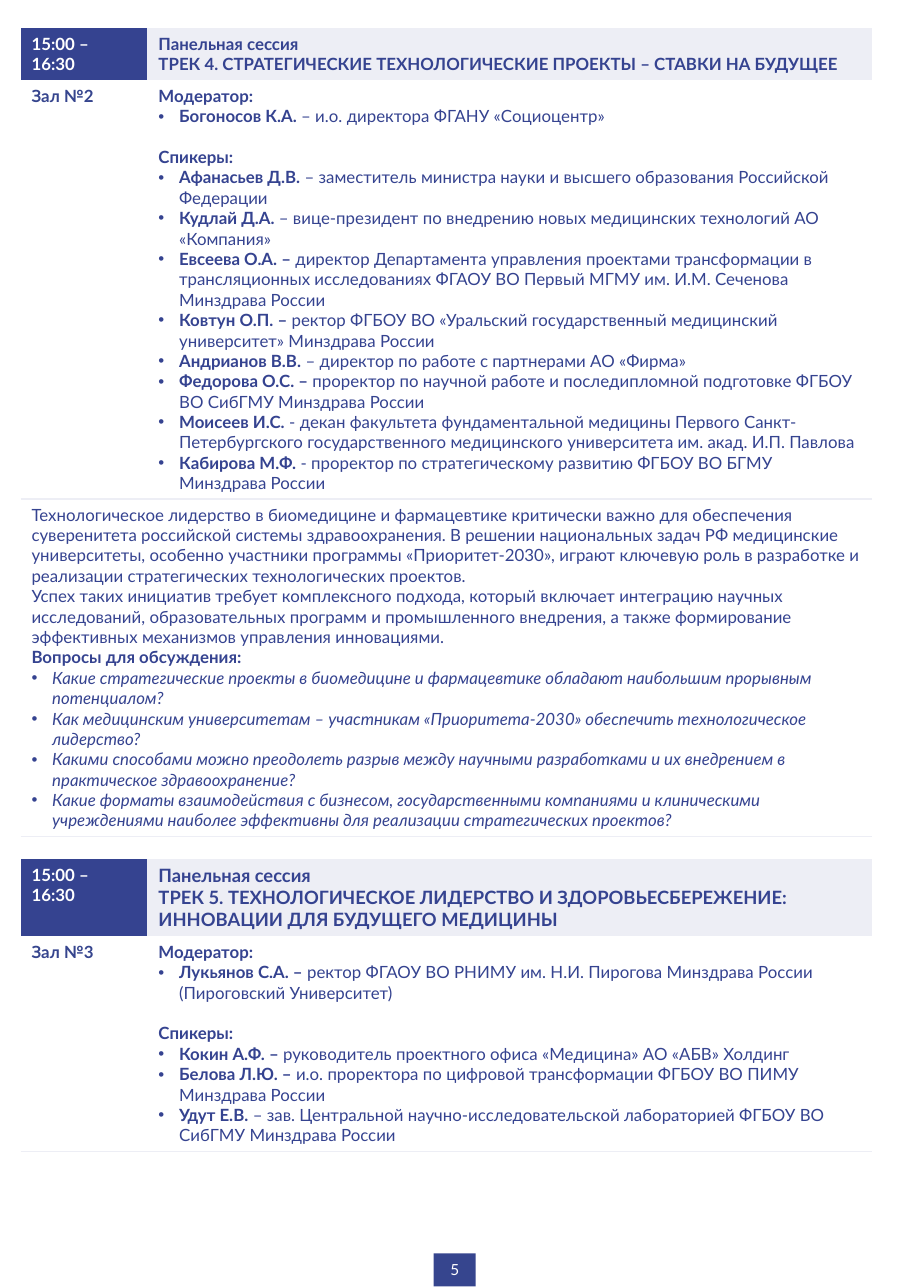
from dataclasses import dataclass

from lxml.etree import SubElement
from pptx import Presentation
from pptx.dml.color import RGBColor
from pptx.enum.shapes import MSO_SHAPE
from pptx.enum.text import MSO_ANCHOR, PP_ALIGN
from pptx.oxml.ns import qn
from pptx.util import Pt


@dataclass(frozen=True)
class Theme:
    font: str = "Lato"
    ink: str = "354390"
    accent: str = "36458E"
    pale: str = "EDEEF5"
    white: str = "FFFFFF"
    text_size: float = 11
    page_size: float = 10
    indent: float = 13.5
    blank_line: float = 13.2


@dataclass(frozen=True)
class Line:
    """A paragraph: bold lead, then plain (or italic) text."""
    lead: str = ""
    text: str = ""
    bullet: bool = False
    italic: bool = False
    gap: bool = False


@dataclass(frozen=True)
class Session:
    time: str
    kind: str
    title: str
    hall: str
    moderator: tuple
    speakers: tuple
    summary: tuple = ()
    questions: tuple = ()
    title_size: float = 11


THEME = Theme()
COLUMNS = (83, 473.5)

TRACK_4 = Session(
    time="15:00 – 16:30",
    kind="Панельная сессия",
    title="ТРЕК 4. СТРАТЕГИЧЕСКИЕ ТЕХНОЛОГИЧЕСКИЕ ПРОЕКТЫ – СТАВКИ НА БУДУЩЕЕ",
    hall="Зал №2",
    moderator=("Богоносов К.А. ", "– и.о. директора ФГАНУ «Социоцентр»"),
    speakers=(
        ("Афанасьев Д.В. ", "– заместитель министра науки и высшего образования Российской Федерации"),
        ("Кудлай Д.А. ", "– вице-президент по внедрению новых медицинских технологий АО «Компания»"),
        ("Евсеева О.А. – ", "директор Департамента управления проектами трансформации в трансляционных "
         "исследованиях ФГАОУ ВО Первый МГМУ им. И.М. Сеченова Минздрава России"),
        ("Ковтун О.П. – ", "ректор ФГБОУ ВО «Уральский государственный медицинский университет» "
         "Минздрава России"),
        ("Андрианов В.В.", " – директор по работе с партнерами АО «Фирма»"),
        ("Федорова О.С. – ", "проректор по научной работе и последипломной подготовке ФГБОУ ВО СибГМУ "
         "Минздрава России"),
        ("Моисеев И.С.", " - декан факультета фундаментальной медицины Первого Санкт-Петербургского "
         "государственного медицинского университета им. акад. И.П. Павлова"),
        ("Кабирова М.Ф.", " - проректор по стратегическому развитию ФГБОУ ВО БГМУ Минздрава России"),
    ),
    summary=(
        "Технологическое лидерство в биомедицине и фармацевтике критически важно для обеспечения "
        "суверенитета российской системы здравоохранения. В решении национальных задач РФ медицинские "
        "университеты, особенно участники программы «Приоритет-2030», играют ключевую роль в разработке "
        "и реализации стратегических технологических проектов.",
        "Успех таких инициатив требует комплексного подхода, который включает интеграцию научных "
        "исследований, образовательных программ и промышленного внедрения, а также формирование "
        "эффективных механизмов управления инновациями.",
    ),
    questions=(
        "Какие стратегические проекты в биомедицине и фармацевтике обладают наибольшим прорывным потенциалом?",
        "Как медицинским университетам – участникам «Приоритета-2030» обеспечить технологическое лидерство?",
        "Какими способами можно преодолеть разрыв между научными разработками и их внедрением "
        "в практическое здравоохранение?",
        "Какие форматы взаимодействия с бизнесом, государственными компаниями и клиническими "
        "учреждениями наиболее эффективны для реализации стратегических проектов?",
    ),
)

TRACK_5 = Session(
    time="15:00 – 16:30",
    kind="Панельная сессия",
    title="ТРЕК 5. ТЕХНОЛОГИЧЕСКОЕ ЛИДЕРСТВО И ЗДОРОВЬЕСБЕРЕЖЕНИЕ: ИННОВАЦИИ ДЛЯ БУДУЩЕГО МЕДИЦИНЫ",
    hall="Зал №3",
    moderator=("Лукьянов С.А. – ", "ректор ФГАОУ ВО РНИМУ им. Н.И. Пирогова Минздрава России "
               "(Пироговский Университет)"),
    speakers=(
        ("Кокин А.Ф. – ", "руководитель проектного офиса «Медицина» АО «АБВ» Холдинг"),
        ("Белова Л.Ю. – ", "и.о. проректора по цифровой трансформации ФГБОУ ВО ПИМУ Минздрава России"),
        ("Удут Е.В.", " – зав. Центральной научно-исследовательской лабораторией ФГБОУ ВО СибГМУ "
         "Минздрава России"),
    ),
    title_size=12,
)


def style_run(span, size, color, bold=False, italic=False):
    span.font.name = THEME.font
    span.font.size = Pt(size)
    span.font.bold = bold
    span.font.italic = italic
    span.font.color.rgb = RGBColor.from_string(color)


def add_bullet(para):
    properties = para._p.get_or_add_pPr()
    properties.set("marL", str(Pt(THEME.indent)))
    properties.set("indent", str(-Pt(THEME.indent)))
    SubElement(properties, qn("a:buFont"), typeface="Arial")
    SubElement(properties, qn("a:buChar"), char="•")


def write_lines(cell, lines, size=THEME.text_size, color=THEME.ink):
    frame = cell.text_frame
    for index, line in enumerate(lines):
        para = frame.add_paragraph() if index else frame.paragraphs[0]
        if line.gap:
            para.space_before = Pt(THEME.blank_line)
        if line.bullet:
            add_bullet(para)
        for text, bold in ((line.lead, True), (line.text, False)):
            if text:
                span = para.add_run()
                span.text = text
                style_run(span, size, color, bold, line.italic)


def paint_cell(cell, fill, ruled_sides=()):
    """Fill the cell and show only the named border sides."""
    properties = cell._tc.get_or_add_tcPr()
    for side in ("lnL", "lnR", "lnT", "lnB"):
        border = SubElement(properties, qn(f"a:{side}"), w=str(Pt(1)))
        if side in ruled_sides:
            paint = SubElement(border, qn("a:solidFill"))
            SubElement(paint, qn("a:srgbClr"), val=THEME.pale)
        else:
            SubElement(border, qn("a:noFill"))
    cell.fill.solid()
    cell.fill.fore_color.rgb = RGBColor.from_string(fill)


def people_lines(session):
    speakers = [Line(*person, bullet=True) for person in session.speakers]
    return [Line("Модератор:"), Line(*session.moderator, bullet=True),
            Line("Спикеры:", gap=True), *speakers]


def summary_lines(session):
    questions = [Line(text=item, bullet=True, italic=True) for item in session.questions]
    return [*(Line(text=item) for item in session.summary),
            Line("Вопросы для обсуждения:"), *questions]


def add_session(page, session, left, top, row_heights):
    table = page.shapes.add_table(len(row_heights), len(COLUMNS), Pt(left), Pt(top),
                                  Pt(sum(COLUMNS)), Pt(sum(row_heights))).table
    table.first_row = table.horz_banding = False
    for column, width in zip(table.columns, COLUMNS):
        column.width = Pt(width)
    for row, height in zip(table.rows, row_heights):
        row.height = Pt(height)

    paint_cell(table.cell(0, 0), THEME.ink)
    paint_cell(table.cell(0, 1), THEME.pale)
    write_lines(table.cell(0, 0), [Line(session.time)], color=THEME.white)
    write_lines(table.cell(0, 1), [Line(session.kind), Line(session.title)], session.title_size)
    for column in range(len(COLUMNS)):
        paint_cell(table.cell(1, column), THEME.white, ("lnB",))
    write_lines(table.cell(1, 0), [Line(session.hall)], color=THEME.accent)
    write_lines(table.cell(1, 1), people_lines(session))

    if session.summary:
        summary = table.cell(2, 0)
        summary.merge(table.cell(2, 1))
        for column in range(len(COLUMNS)):
            paint_cell(table.cell(2, column), THEME.white, ("lnT", "lnB"))
        write_lines(summary, summary_lines(session))


def add_page_number(page, number, left, top, width, height):
    box = page.shapes.add_shape(MSO_SHAPE.RECTANGLE, Pt(left), Pt(top), Pt(width), Pt(height))
    box.shadow.inherit = False
    box.fill.solid()
    box.fill.fore_color.rgb = RGBColor.from_string(THEME.accent)
    box.line.fill.background()
    frame = box.text_frame
    frame.text = str(number)
    frame.vertical_anchor = MSO_ANCHOR.MIDDLE
    para = frame.paragraphs[0]
    para.alignment = PP_ALIGN.CENTER
    style_run(para.runs[0], THEME.page_size, THEME.white)


def main():
    deck = Presentation()
    deck.slide_width, deck.slide_height = Pt(595.5), Pt(841.7)
    page = deck.slides.add_slide(deck.slide_layouts[6])
    add_page_number(page, 5, left=283.5, top=819, width=27.5, height=21.7)
    add_session(page, TRACK_4, left=13.4, top=18.5, row_heights=(34, 273.5, 220))
    add_session(page, TRACK_5, left=13.4, top=561.5, row_heights=(50, 140.5))
    deck.save("out.pptx")


if __name__ == "__main__":
    main()
